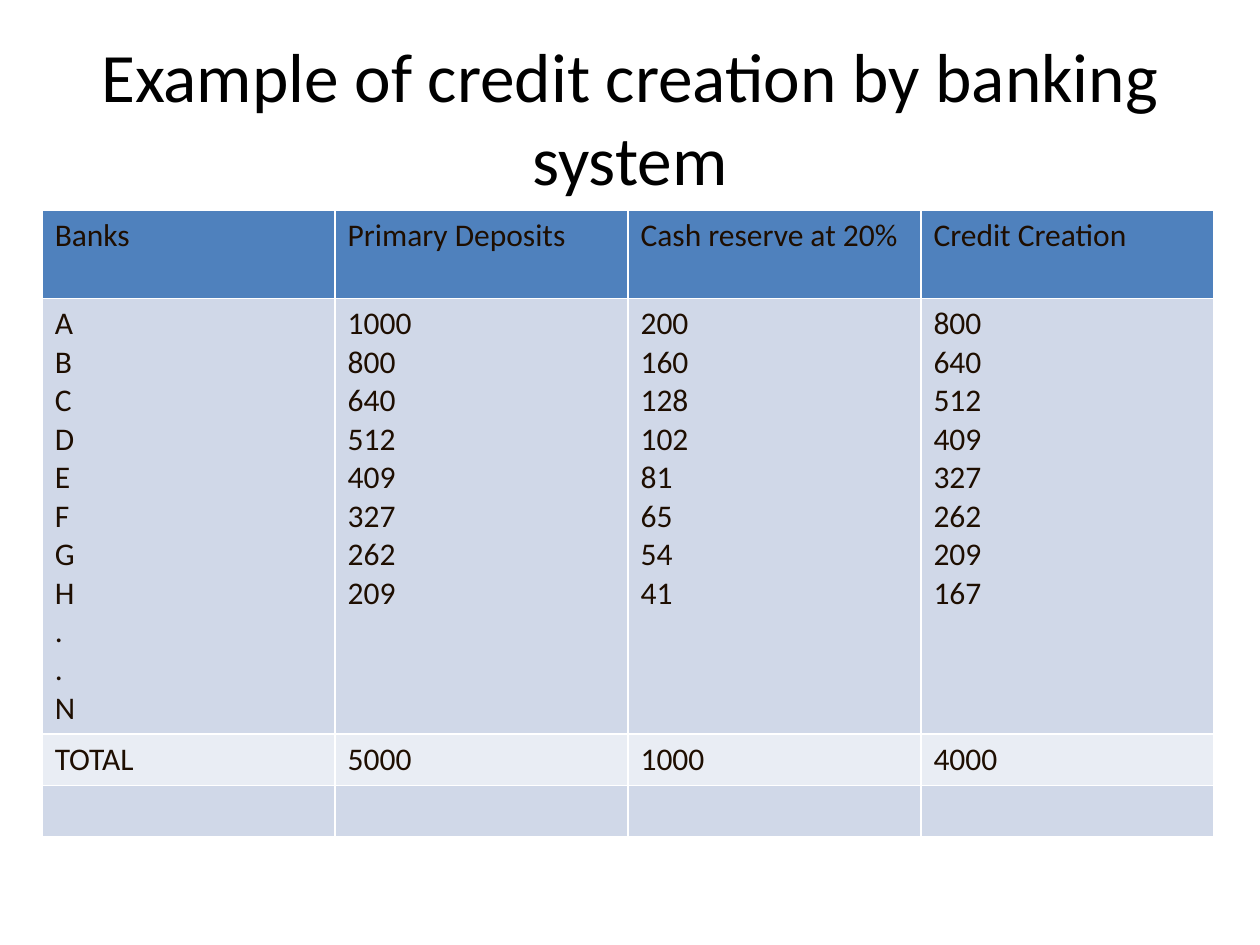
from dataclasses import dataclass

from lxml.etree import SubElement
from pptx import Presentation
from pptx.dml.color import RGBColor
from pptx.enum.text import MSO_ANCHOR, PP_ALIGN
from pptx.oxml.ns import qn
from pptx.util import Cm, Pt


@dataclass(frozen=True)
class Theme:
    font: str = "Calibri"
    title_size: float = 39.6
    table_size: float = 18
    title_color: str = "000000"
    table_color: str = "1E0E01"
    header_fill: str = "4F81BD"
    dark_band: str = "D0D8E8"
    light_band: str = "E9EDF4"
    border: str = "FFFFFF"
    border_width: float = 1


THEME = Theme()

HEADINGS = ["Banks", "Primary Deposits", "Cash reserve at 20%", "Credit Creation"]
BANK_COLUMNS = [
    "A B C D E F G H . . N",
    "1000 800 640 512 409 327 262 209",
    "200 160 128 102 81 65 54 41",
    "800 640 512 409 327 262 209 167",
]
TOTALS = ["TOTAL", "5000", "1000", "4000"]


def write_text(frame, text, *, size, color, align=PP_ALIGN.LEFT):
    frame.word_wrap = True
    frame.text = text
    for paragraph in frame.paragraphs:
        paragraph.alignment = align
        paragraph.font.name = THEME.font
        paragraph.font.size = Pt(size)
        paragraph.font.color.rgb = RGBColor.from_string(color)


def add_title(slide, text):
    title = slide.shapes.add_textbox(Cm(1.27), Cm(0.76), Cm(22.86), Cm(3.18))
    title.text_frame.vertical_anchor = MSO_ANCHOR.MIDDLE
    write_text(title.text_frame, text, size=THEME.title_size,
               color=THEME.title_color, align=PP_ALIGN.CENTER)


def set_borders(cell):
    properties = cell._tc.get_or_add_tcPr()
    for position, side in enumerate(("lnL", "lnR", "lnT", "lnB")):
        border = SubElement(properties, qn(f"a:{side}"), w=str(Pt(THEME.border_width)))
        fill = SubElement(border, qn("a:solidFill"))
        SubElement(fill, qn("a:srgbClr"), val=THEME.border)
        properties.insert(position, border)


def add_credit_table(slide):
    bank_lines = [column.replace(" ", "\n") for column in BANK_COLUMNS]
    rows = [
        (HEADINGS, Cm(1.78), THEME.header_fill),
        (bank_lines, Cm(8.78), THEME.dark_band),
        (TOTALS, Cm(1.03), THEME.light_band),
        ([""] * len(HEADINGS), Cm(1.03), THEME.dark_band),
    ]
    height = sum(row_height for _, row_height, _ in rows)
    table = slide.shapes.add_table(len(rows), len(HEADINGS), Cm(0.85), Cm(4.24),
                                   Cm(23.62), height).table
    for row, (texts, row_height, fill) in zip(table.rows, rows):
        row.height = row_height
        for cell, text in zip(row.cells, texts):
            cell.fill.solid()
            cell.fill.fore_color.rgb = RGBColor.from_string(fill)
            set_borders(cell)
            write_text(cell.text_frame, text, size=THEME.table_size,
                       color=THEME.table_color)


def main():
    presentation = Presentation()
    presentation.slide_width = Cm(25.4)
    presentation.slide_height = Cm(19.05)
    slide = presentation.slides.add_slide(presentation.slide_layouts[6])
    add_title(slide, "Example of credit creation by banking system")
    add_credit_table(slide)
    presentation.save("out.pptx")


if __name__ == "__main__":
    main()
